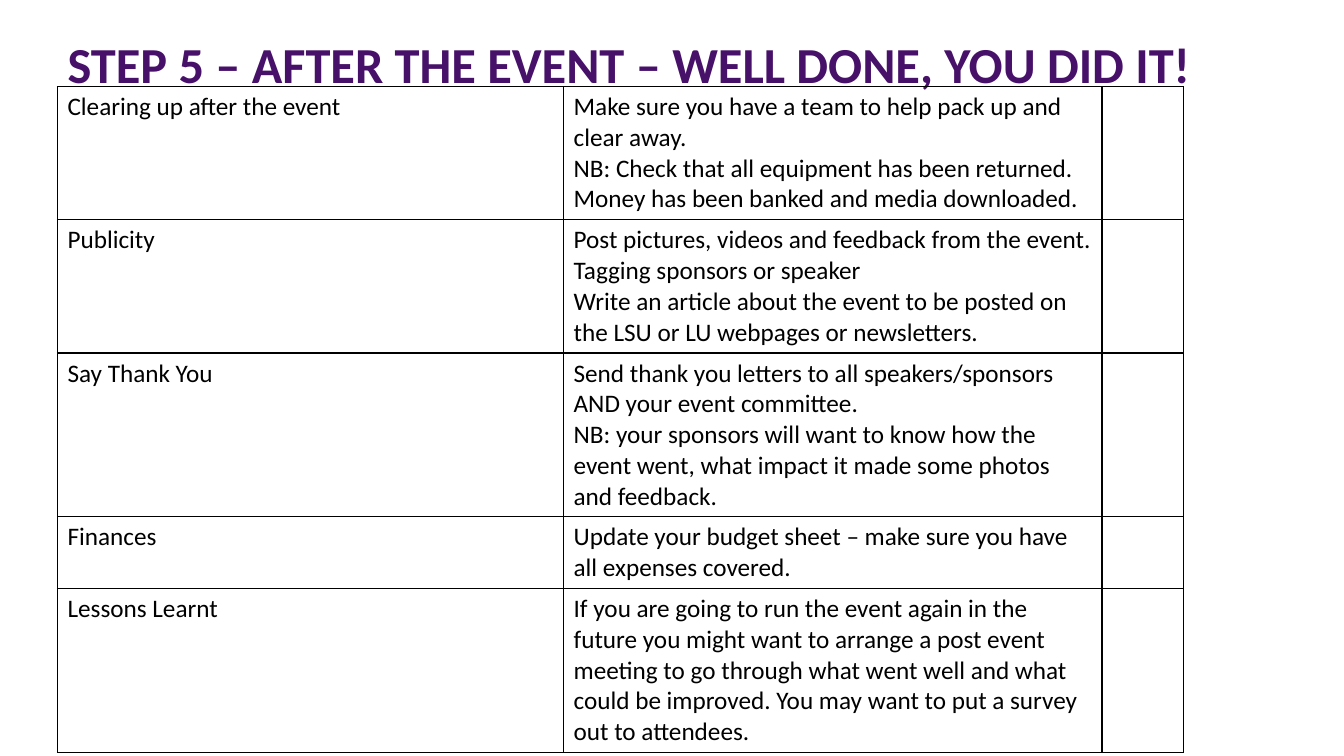
from pptx import Presentation
from pptx.util import Inches, Pt
from pptx.dml.color import RGBColor as Rgb
from pptx.enum.text import MSO_ANCHOR as Anchor, MSO_AUTO_SIZE as Fit, PP_ALIGN as Align
from pptx.oxml import parse_xml
from pptx.oxml.ns import nsdecls

PURPLE = Rgb(0x47, 0x10, 0x69)
BLACK = Rgb(0, 0, 0)

TITLE = "STEP 5 – AFTER THE EVENT – WELL DONE, YOU DID IT!"
STEPS = [
    ("Clearing up after the event",
     "Make sure you have a team to help pack up and clear away.\n"
     "NB: Check that all equipment has been returned. "
     "Money has been banked and media downloaded."),
    ("Publicity",
     "Post pictures, videos and feedback from the event. Tagging sponsors or speaker\n"
     "Write an article about the event to be posted on the LSU or LU webpages or newsletters."),
    ("Say Thank You",
     "Send thank you letters to all speakers/sponsors AND your event committee.\n"
     "NB: your sponsors will want to know how the event went, "
     "what impact it made some photos and feedback."),
    ("Finances",
     "Update your budget sheet – make sure you have all expenses covered."),
    ("Lessons Learnt",
     "If you are going to run the event again in the future you might want to arrange "
     "a post event meeting to go through what went well and what could be improved. "
     "You may want to put a survey out to attendees."),
]
WIDTHS = [5.02, 5.34, 0.81]
ROW = 0.41


class Page:
    face = "Calibri"

    def __init__(self, deck):
        self.slide = deck.slides.add_slide(deck.slide_layouts[5])

    def style(self, para, size, color, bold=False):
        font = para.font
        font.name, font.size, font.bold = self.face, Pt(size), bold
        font.color.rgb = color

    def title(self, text, left, top, width, height):
        box = self.slide.shapes.title
        box.left, box.top = Inches(left), Inches(top)
        box.width, box.height = Inches(width), Inches(height)
        frame = box.text_frame
        frame.text = text
        frame.auto_size = Fit.NONE
        frame.vertical_anchor = Anchor.MIDDLE
        para = frame.paragraphs[0]
        para.alignment = Align.LEFT
        self.style(para, 36, PURPLE, True)

    def border(self, cell):
        props = cell._tc.get_or_add_tcPr()
        for spot, side in enumerate(("lnL", "lnR", "lnT", "lnB")):
            props.insert(spot, parse_xml(
                f'<a:{side} {nsdecls("a")} w="{Pt(1)}"><a:solidFill>'
                f'<a:srgbClr val="{BLACK}"/></a:solidFill></a:{side}>'))

    def table(self, rows, left, top):
        grid = self.slide.shapes.add_table(
            len(rows), len(WIDTHS), Inches(left), Inches(top),
            Inches(sum(WIDTHS)), Inches(ROW * len(rows))).table
        grid.first_row = grid.horz_banding = False
        for col, width in zip(grid.columns, WIDTHS):
            col.width = Inches(width)
        for line, texts in zip(grid.rows, rows):
            line.height = Inches(ROW)
            for cell, text in zip(line.cells, (*texts, "")):
                cell.text = text
                cell.fill.background()
                self.border(cell)
                for para in cell.text_frame.paragraphs:
                    self.style(para, 18, BLACK)


def main():
    deck = Presentation()
    deck.slide_width, deck.slide_height = Inches(13.33), Inches(7.5)
    page = Page(deck)
    page.title(TITLE, 0.57, 0, 12, 1.25)
    page.table(STEPS, 0.57, 0.86)
    deck.save("out.pptx")


if __name__ == "__main__":
    main()
